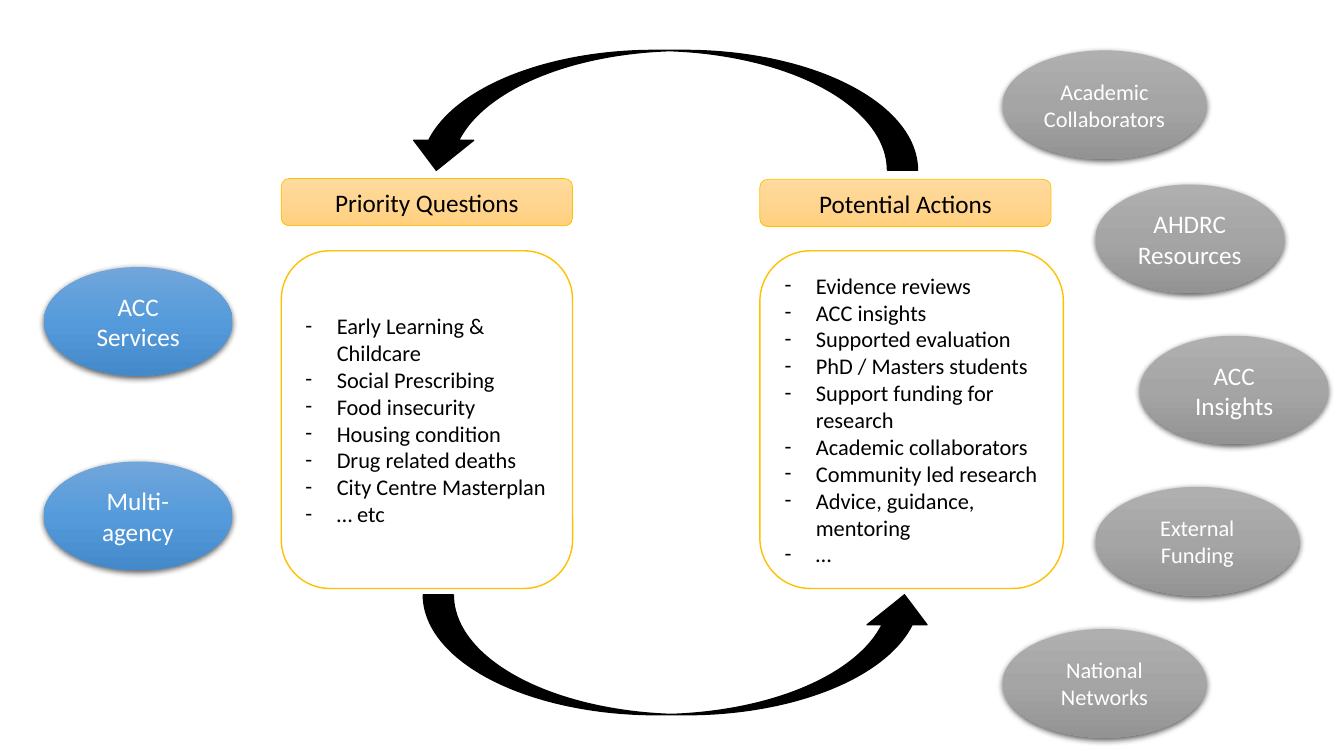
from dataclasses import dataclass

from lxml.etree import SubElement
from pptx import Presentation
from pptx.dml.color import RGBColor
from pptx.enum.shapes import MSO_SHAPE
from pptx.enum.text import MSO_ANCHOR, PP_ALIGN
from pptx.oxml.ns import qn
from pptx.shapes.autoshape import Shape
from pptx.slide import Slide
from pptx.util import Cm, Pt

COLORS = {
    "black": "000000",
    "white": "FFFFFF",
    "gold": "FFC000",
}
GRADIENTS = {
    "gold": ("FFDB9E", "FFD590", "FFD07C"),
    "blue": ("71A6DB", "559BDB", "448ACA"),
    "grey": ("AFAFAF", "A5A5A5", "939393"),
}
FONT = "Calibri"
BULLET_INDENT = Cm(0.79)
OVAL_HEIGHT = 2.74


@dataclass
class Panel:
    title: str
    left: float
    title_top: float
    width: float
    items: list[str]


@dataclass
class Oval:
    text: str
    left: float
    top: float
    gradient: str
    width: float = 4.75
    size: int = 18


@dataclass
class Arrow:
    left: float
    top: float
    rotation: int


PANELS = [
    Panel("Priority Questions", 7.09, 4.5, 7.34, [
        "Early Learning & Childcare",
        "Social Prescribing",
        "Food insecurity",
        "Housing condition",
        "Drug related deaths",
        "City Centre Masterplan",
        "… etc",
    ]),
    Panel("Potential Actions", 19.15, 4.52, 7.65, [
        "Evidence reviews",
        "ACC insights",
        "Supported evaluation",
        "PhD / Masters students",
        "Support funding for research",
        "Academic collaborators",
        "Community led research",
        "Advice, guidance, mentoring",
        "…",
    ]),
]
ARROWS = [Arrow(10.67, 14.99, 0), Arrow(10.24, 1.27, 180)]
OVALS = [
    Oval("ACC Services", 1.11, 6.73, "blue"),
    Oval("Multi-agency", 1.1, 11.63, "blue"),
    Oval("Academic Collaborators", 25.27, 1.27, "grey", 5.13, 16),
    Oval("AHDRC Resources", 27.61, 4.65, "grey"),
    Oval("ACC Insights", 28.73, 8.46, "grey"),
    Oval("External Funding", 27.61, 12.27, "grey", 5.13, 16),
    Oval("National Networks", 25.27, 15.85, "grey", 5.13, 16),
]


def rgb(name: str) -> RGBColor:
    return RGBColor.from_string(COLORS[name])


def add_box(s: Slide, kind: MSO_SHAPE, left: float, top: float, width: float,
            height: float, line: str | None = None, weight: float = 1) -> Shape:
    sp = s.shapes.add_shape(kind, Cm(left), Cm(top), Cm(width), Cm(height))
    sp.shadow.inherit = False
    if line:
        sp.line.color.rgb = rgb(line)
        sp.line.width = Pt(weight)
    else:
        sp.line.fill.background()
    return sp


def fill_solid(sp: Shape, color: str) -> None:
    sp.fill.solid()
    sp.fill.fore_color.rgb = rgb(color)


def fill_gradient(sp: Shape, name: str) -> None:
    sp.fill.gradient()
    sp.fill.gradient_angle = 270
    stops = sp._element.spPr.find(f".//{qn('a:gsLst')}")
    for stop in list(stops):
        stops.remove(stop)
    for pos, color in zip((0, 50000, 100000), GRADIENTS[name]):
        stop = SubElement(stops, qn("a:gs"), pos=str(pos))
        SubElement(stop, qn("a:srgbClr"), val=color)


def add_shadow(sp: Shape) -> None:
    effects = sp._element.spPr.find(qn("a:effectLst"))
    shadow = SubElement(effects, qn("a:outerShdw"), blurRad=str(Pt(4.5)),
                        dist=str(Pt(1.5)), dir="5400000", algn="ctr", rotWithShape="0")
    color = SubElement(shadow, qn("a:srgbClr"), val=COLORS["black"])
    SubElement(color, qn("a:alpha"), val="63000")


def write(sp: Shape, *lines: str, size: int = 18, color: str = "black",
          bullet: str | None = None) -> None:
    tf = sp.text_frame
    tf.word_wrap = True
    tf.vertical_anchor = MSO_ANCHOR.MIDDLE
    for i, text in enumerate(lines):
        p = tf.add_paragraph() if i else tf.paragraphs[0]
        p.alignment = PP_ALIGN.LEFT if bullet else PP_ALIGN.CENTER
        if bullet:
            pPr = p._p.get_or_add_pPr()
            pPr.set("marL", str(BULLET_INDENT))
            pPr.set("indent", str(-BULLET_INDENT))
            SubElement(pPr, qn("a:buFont"), typeface=FONT)
            SubElement(pPr, qn("a:buChar"), char=bullet)
        r = p.add_run()
        r.text = text
        r.font.name = FONT
        r.font.size = Pt(size)
        r.font.color.rgb = rgb(color)


def add_panel(s: Slide, panel: Panel) -> None:
    title = add_box(s, MSO_SHAPE.ROUNDED_RECTANGLE, panel.left, panel.title_top,
                    7.34, 1.19, "gold", 0.5)
    fill_gradient(title, "gold")
    write(title, panel.title)
    body = add_box(s, MSO_SHAPE.ROUNDED_RECTANGLE, panel.left, 6.32,
                   panel.width, 8.51, "gold")
    fill_solid(body, "white")
    write(body, *panel.items, size=16, bullet="-")


def add_arrow(s: Slide, arrow: Arrow) -> None:
    sp = add_box(s, MSO_SHAPE.CURVED_UP_ARROW, arrow.left, arrow.top, 12.88, 3.02, "black")
    sp.rotation = arrow.rotation
    fill_solid(sp, "black")


def add_oval(s: Slide, oval: Oval) -> None:
    sp = add_box(s, MSO_SHAPE.OVAL, oval.left, oval.top, oval.width, OVAL_HEIGHT)
    fill_gradient(sp, oval.gradient)
    add_shadow(sp)
    write(sp, oval.text, size=oval.size, color="white")


def main() -> None:
    prs = Presentation()
    prs.slide_width, prs.slide_height = Cm(33.87), Cm(19.05)
    s = prs.slides.add_slide(prs.slide_layouts[6])
    for panel in PANELS:
        add_panel(s, panel)
    for arrow in ARROWS:
        add_arrow(s, arrow)
    for oval in OVALS:
        add_oval(s, oval)
    prs.save("out.pptx")


if __name__ == "__main__":
    main()
